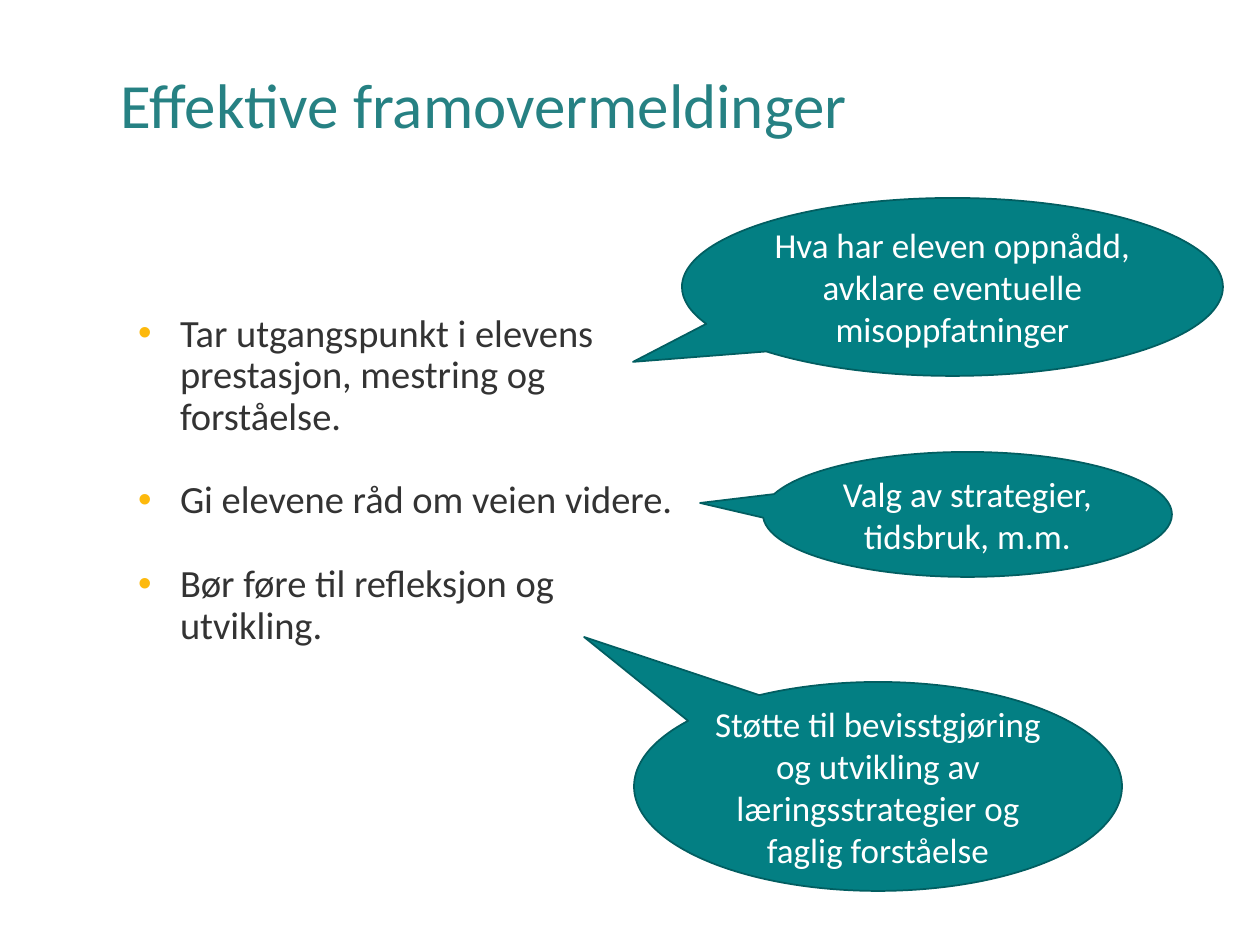
from lxml.etree import SubElement
from pptx import Presentation
from pptx.dml.color import RGBColor
from pptx.enum.shapes import MSO_SHAPE
from pptx.enum.text import MSO_ANCHOR as ANCHOR, PP_ALIGN as ALIGN
from pptx.oxml.ns import qn
from pptx.util import Pt

COLORS = {"title": "268183", "body": "333333", "bullet": "FDB90C",
          "callout": "037F83", "outline": "025E61", "label": "FFFFFF"}
FONT = "Calibri"

TITLE = "Effektive framovermeldinger"
POINTS = [
    "Tar utgangspunkt i elevens prestasjon, mestring og forståelse.",
    "Gi elevene råd om veien videre.",
    "Bør føre til refleksjon og utvikling.",
]
# text, box in px (left, top, width, height), pointer tip in px
CALLOUTS = [
    ("Hva har eleven oppnådd, avklare eventuelle misoppfatninger",
     (682, 198, 541, 178), (633, 362)),
    ("Valg av strategier, tidsbruk, m.m.",
     (763, 452, 409, 125), (700, 503)),
    ("Støtte til bevisstgjøring og utvikling av læringsstrategier og faglig forståelse",
     (634, 682, 488, 209), (584, 637)),
]


def px(n):
    return round(n * 914400 / 126)


def rgb(name):
    return RGBColor.from_string(COLORS[name])


def add_bullet(p, indent, hang):
    pPr = p._p.get_or_add_pPr()
    pPr.set("marL", str(px(indent)))
    pPr.set("indent", str(-px(hang)))
    clr = SubElement(pPr, qn("a:buClr"))
    SubElement(clr, qn("a:srgbClr"), val=COLORS["bullet"])
    SubElement(pPr, qn("a:buFont"), typeface="Arial")
    SubElement(pPr, qn("a:buChar"), char="•")


def write(sp, lines, size, color, align=ALIGN.LEFT, anchor=ANCHOR.MIDDLE,
          inset=(9, 9), spacing=None, after=None, bullet=None):
    tf = sp.text_frame
    tf.word_wrap = True
    tf.vertical_anchor = anchor
    tf.margin_left = tf.margin_right = px(inset[0])
    tf.margin_top = tf.margin_bottom = px(inset[1])
    for i, line in enumerate(lines):
        p = tf.add_paragraph() if i else tf.paragraphs[0]
        p.alignment = align
        if spacing:
            p.line_spacing = spacing
        if after:
            p.space_after = Pt(after)
        if bullet:
            add_bullet(p, *bullet)
        r = p.add_run()
        r.text = line
        r.font.name, r.font.size = FONT, Pt(size)
        r.font.color.rgb = rgb(color)


prs = Presentation()
prs.slide_width, prs.slide_height = px(1260), px(945)
slide = prs.slides.add_slide(prs.slide_layouts[6])
shapes = slide.shapes

# Title
title = shapes.add_textbox(px(112), px(40), px(1045), px(137))
write(title, [TITLE], 36, "title", spacing=0.9)

# Bullet points
body = shapes.add_textbox(px(123), px(305), px(588), px(420))
write(body, POINTS, 22, "body", anchor=ANCHOR.TOP, spacing=0.9, after=24,
      bullet=(48, 42))

# Callouts; the adjustments give the tip's offset from the centre
for text, (x, y, w, h), (tip_x, tip_y) in CALLOUTS:
    sp = shapes.add_shape(MSO_SHAPE.OVAL_CALLOUT, px(x), px(y), px(w), px(h))
    sp.adjustments[0] = (tip_x - x) / w - 0.5
    sp.adjustments[1] = (tip_y - y) / h - 0.5
    sp.shadow.inherit = False
    sp.fill.solid()
    sp.fill.fore_color.rgb = rgb("callout")
    sp.line.color.rgb = rgb("outline")
    sp.line.width = Pt(1)
    write(sp, [text], 20, "label", align=ALIGN.CENTER, inset=(5, 0))

prs.save("out.pptx")
